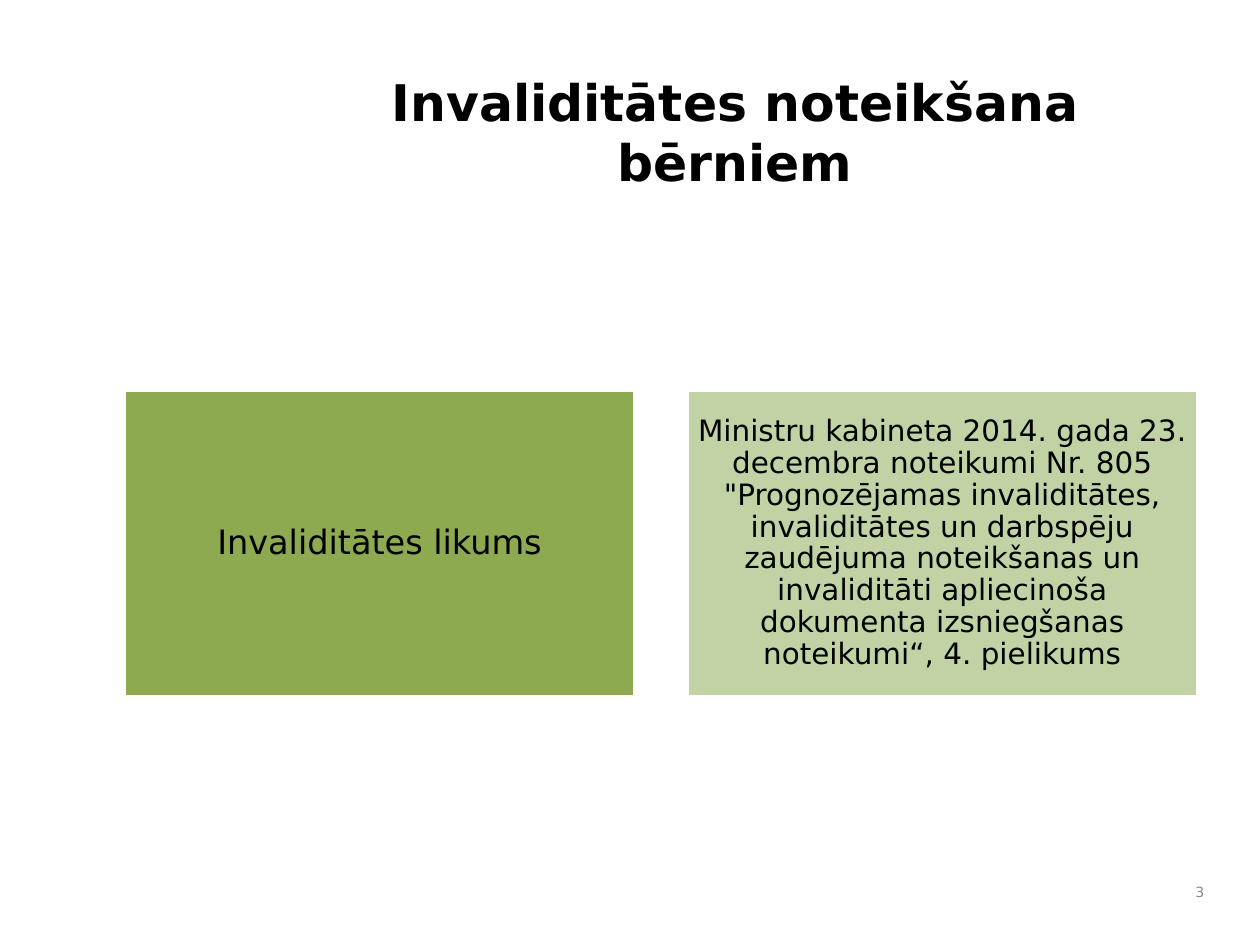
from pptx import Presentation
from pptx.dml.color import RGBColor
from pptx.enum.shapes import MSO_SHAPE
from pptx.enum.text import MSO_ANCHOR, MSO_AUTO_SIZE, PP_ALIGN
from pptx.util import Inches, Pt

COLORS = {
    "text": "000000",
    "number": "898989",
    "law": "8DAA51",
    "rules": "C1D3A5",
    "border": "FFFFFF",
}
FONT = "DejaVu Sans"
CARDS = [
    ("Invaliditātes likums", "law", 16, 0.07),
    ("Ministru kabineta 2014. gada 23. decembra noteikumi Nr. 805 "
     "\"Prognozējamas invaliditātes, invaliditātes un darbspēju zaudējuma "
     "noteikšanas un invaliditāti apliecinoša dokumenta izsniegšanas "
     "noteikumi“, 4. pielikums", "rules", 14, 0.06),
]


def rgb(name):
    """Return the named palette colour."""
    return RGBColor.from_string(COLORS[name])


def write(sp, text, size, color="text", bold=False, align=PP_ALIGN.CENTER,
          anchor=MSO_ANCHOR.MIDDLE, inset=(0.1, 0.05)):
    """Write one formatted paragraph into a shape and return it."""
    tf = sp.text_frame
    tf.word_wrap = True
    tf.auto_size = MSO_AUTO_SIZE.NONE
    tf.vertical_anchor = anchor
    tf.margin_left = tf.margin_right = Inches(inset[0])
    tf.margin_top = tf.margin_bottom = Inches(inset[1])
    p = tf.paragraphs[0]
    p.alignment = align
    r = p.add_run()
    r.text = text
    r.font.name = FONT
    r.font.size = Pt(size)
    r.font.bold = bold
    r.font.color.rgb = rgb(color)
    return p


def add_title(s, x, y, w, h):
    """Place the slide title in the given box."""
    sp = s.shapes.title
    sp.left, sp.top, sp.width, sp.height = map(Inches, (x, y, w, h))
    write(sp, "Invaliditātes noteikšana bērniem", 24, bold=True,
          anchor=MSO_ANCHOR.TOP)


def add_cards(s, x, y, w, h, gap=0.34):
    """Fill the box with equal cards in a row."""
    card_w = (w - gap * (len(CARDS) - 1)) / len(CARDS)
    for i, (text, fill, size, inset) in enumerate(CARDS):
        sp = s.shapes.add_shape(
            MSO_SHAPE.RECTANGLE, Inches(x + i * (card_w + gap)), Inches(y),
            Inches(card_w), Inches(h))
        sp.shadow.inherit = False
        sp.fill.solid()
        sp.fill.fore_color.rgb = rgb(fill)
        sp.line.color.rgb = rgb("border")
        sp.line.width = Pt(2)
        p = write(sp, text, size, inset=(inset, inset))
        p.line_spacing = 0.9


def add_number(s, x, y, w, h):
    """Place the page number in the given box."""
    sp = s.shapes.add_textbox(*map(Inches, (x, y, w, h)))
    write(sp, "3", 6.7, "number", align=PP_ALIGN.RIGHT)


def main():
    """Build and save the slide."""
    prs = Presentation()
    prs.slide_width, prs.slide_height = Inches(8.33), Inches(6.25)
    s = prs.slides.add_slide(prs.slide_layouts[5])
    add_title(s, 1.81, 0.42, 6.1, 0.87)
    add_cards(s, 0.82, 2.58, 7.1, 2.03)
    add_number(s, 7.78, 5.76, 0.28, 0.28)
    prs.save("out.pptx")


if __name__ == "__main__":
    main()
